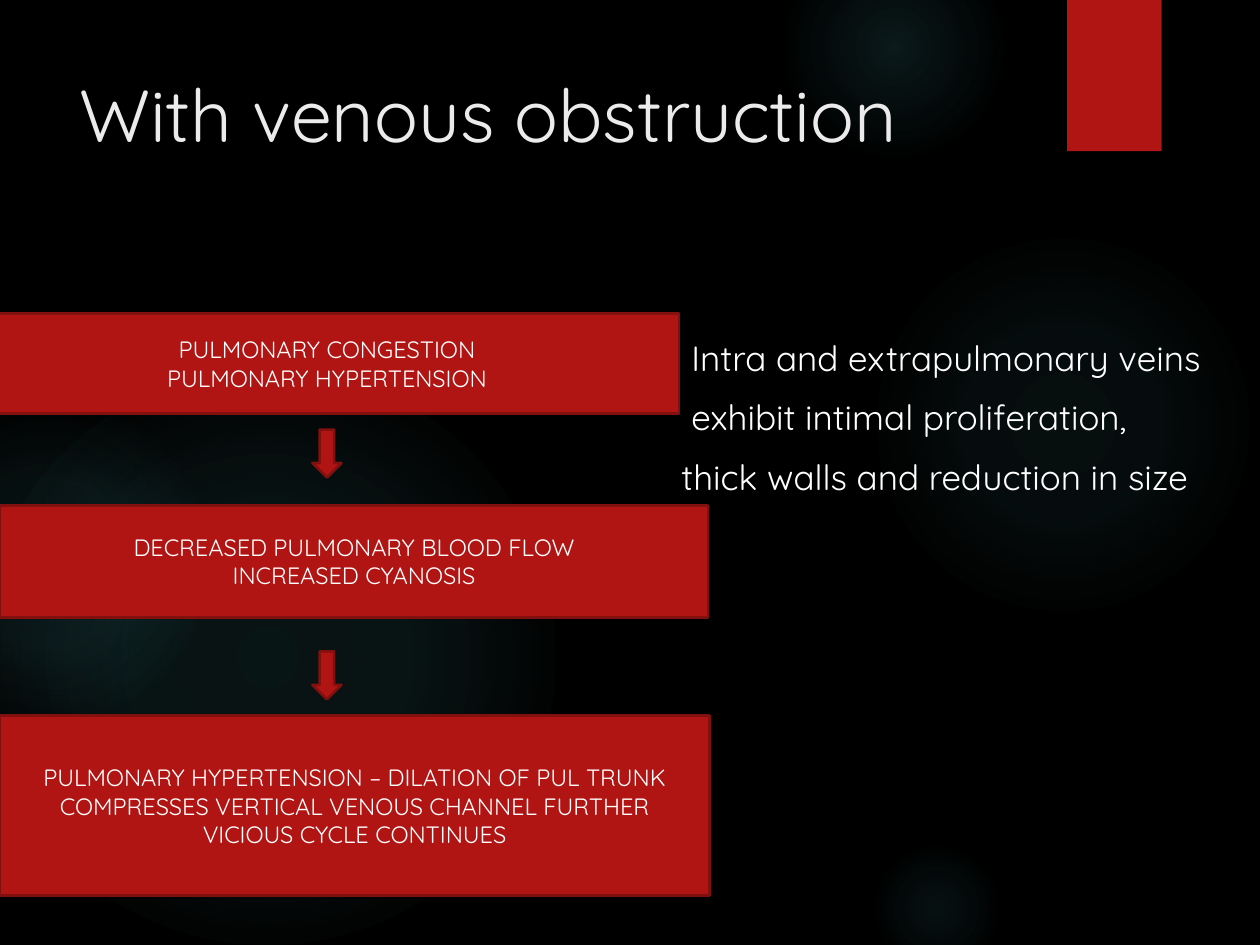
from lxml import etree
from pptx import Presentation
from pptx.dml.color import RGBColor
from pptx.enum.shapes import MSO_SHAPE
from pptx.enum.text import MSO_ANCHOR, PP_ALIGN
from pptx.oxml import parse_xml
from pptx.oxml.ns import nsdecls, qn
from pptx.util import Inches, Pt

OVAL, RECTANGLE, ARROW = MSO_SHAPE.OVAL, MSO_SHAPE.RECTANGLE, MSO_SHAPE.DOWN_ARROW
TOP, MIDDLE = MSO_ANCHOR.TOP, MSO_ANCHOR.MIDDLE
LEFT, CENTER = PP_ALIGN.LEFT, PP_ALIGN.CENTER

FONT = "Quicksand"
BLACK, WHITE, PALE = "000000", "FFFFFF", "EBEBEB"
RED, DARK_RED, TEAL = "B01513", "82100E", "50B9C1"

# Left, top, diameter, then gradient stops as (position %, opacity %)
GLOWS = [
    (6.89, 1.83, 3.08, [(0, 7), (36, 6), (69, 0)]),
    (6.22, -0.5, 1.75, [(0, 14), (36, 7), (73, 0)]),
    (6.89, 6.67, 1.08, [(0, 9), (36, 5), (66, 0)]),
    (-0.17, 2.92, 4.58, [(0, 11), (36, 10), (75, 0)]),
    (-0.92, 3.17, 2.58, [(0, 8), (36, 8), (72, 0)]),
]

# Left, top, width, height, lines of text
STEPS = [
    (-0.2, 2.49, 5.59, 0.79, ["PULMONARY CONGESTION", "PULMONARY HYPERTENSION"]),
    (0, 4.01, 5.62, 0.89, ["DECREASED PULMONARY BLOOD FLOW", "INCREASED CYANOSIS"]),
    (0, 5.68, 5.63, 1.43, ["PULMONARY HYPERTENSION – DILATION OF PUL TRUNK",
                           "COMPRESSES VERTICAL VENOUS CHANNEL FURTHER",
                           "VICIOUS CYCLE CONTINUES"]),
]
ARROW_TOPS = [3.41, 5.17]

FINDINGS = ["Intra and extrapulmonary veins", "exhibit intimal proliferation,",
            "thick walls and reduction in size"]


def color(hex_string):
    return RGBColor.from_string(hex_string)


def inches(*lengths):
    return [Inches(length) for length in lengths]


def add_shape(slide, kind, box, fill=RED, line=None):
    shape = slide.shapes.add_shape(kind, *inches(*box))
    shape.shadow.inherit = False
    shape.fill.solid()
    shape.fill.fore_color.rgb = color(fill)
    if line:
        shape.line.color.rgb = color(line)
        shape.line.width = Pt(1.5)
    else:
        shape.line.fill.background()
    return shape


def add_glow(slide, left, top, diameter, stops):
    shape = add_shape(slide, OVAL, (left, top, diameter, diameter), TEAL)
    stop_xml = "".join(
        f'<a:gs pos="{position * 1000}"><a:srgbClr val="{TEAL}">'
        f'<a:alpha val="{opacity * 1000}"/></a:srgbClr></a:gs>'
        for position, opacity in stops)
    gradient = parse_xml(
        f'<a:gradFill {nsdecls("a")} rotWithShape="1"><a:gsLst>{stop_xml}</a:gsLst>'
        '<a:path path="circle"><a:fillToRect l="50000" t="50000" r="50000" b="50000"/>'
        '</a:path></a:gradFill>')
    properties = shape.fill._xPr
    properties.replace(properties.find(qn("a:solidFill")), gradient)


def set_text(shape, lines, size, hex_string, align=LEFT, anchor=TOP, space_before=0):
    frame = shape.text_frame
    frame.word_wrap = True
    frame.vertical_anchor = anchor
    frame.text = "\n".join(lines)
    for paragraph in frame.paragraphs:
        paragraph.alignment = align
        paragraph.space_before = Pt(space_before)
        for run in paragraph.runs:
            run.font.name = FONT
            run.font.size = Pt(size)
            run.font.color.rgb = color(hex_string)


def add_text(slide, box, lines, size, hex_string, space_before=0):
    shape = slide.shapes.add_textbox(*inches(*box))
    set_text(shape, lines, size, hex_string, space_before=space_before)
    return shape


def indent(paragraph, length):
    paragraph._p.get_or_add_pPr().set("marL", str(Inches(length)))


def main():
    presentation = Presentation()
    presentation.slide_width, presentation.slide_height = inches(10, 7.5)
    slide = presentation.slides.add_slide(presentation.slide_layouts[6])

    # Background with soft glows and the red tab
    slide.background.fill.solid()
    slide.background.fill.fore_color.rgb = color(BLACK)
    for glow in GLOWS:
        add_glow(slide, *glow)
    tab = add_shape(slide, RECTANGLE, (8.47, 0, 0.75, 1.2))
    effects = tab._element.spPr.find(qn("a:effectLst"))
    shadow = etree.SubElement(effects, qn("a:outerShdw"), blurRad=str(Pt(3)),
                              dist=str(Pt(2)), dir="5400000", rotWithShape="0")
    shade = etree.SubElement(shadow, qn("a:srgbClr"), val=BLACK)
    etree.SubElement(shade, qn("a:alpha"), val="45000")

    # Title and findings
    add_text(slide, (0.53, 0.5, 7.72, 1.53), ["With venous obstruction"], 42, PALE)
    findings = add_text(slide, (5.31, 2.62, 4.53, 3.44), FINDINGS, 20, WHITE, 10)
    for paragraph in findings.text_frame.paragraphs[:2]:
        indent(paragraph, 0.08)

    # Flow of steps
    for *box, lines in STEPS:
        step = add_shape(slide, RECTANGLE, box, line=DARK_RED)
        set_text(step, lines, 13.5, WHITE, CENTER, MIDDLE)
    for top in ARROW_TOPS:
        add_shape(slide, ARROW, (2.48, top, 0.23, 0.38), line=DARK_RED)

    presentation.save("out.pptx")


if __name__ == "__main__":
    main()
